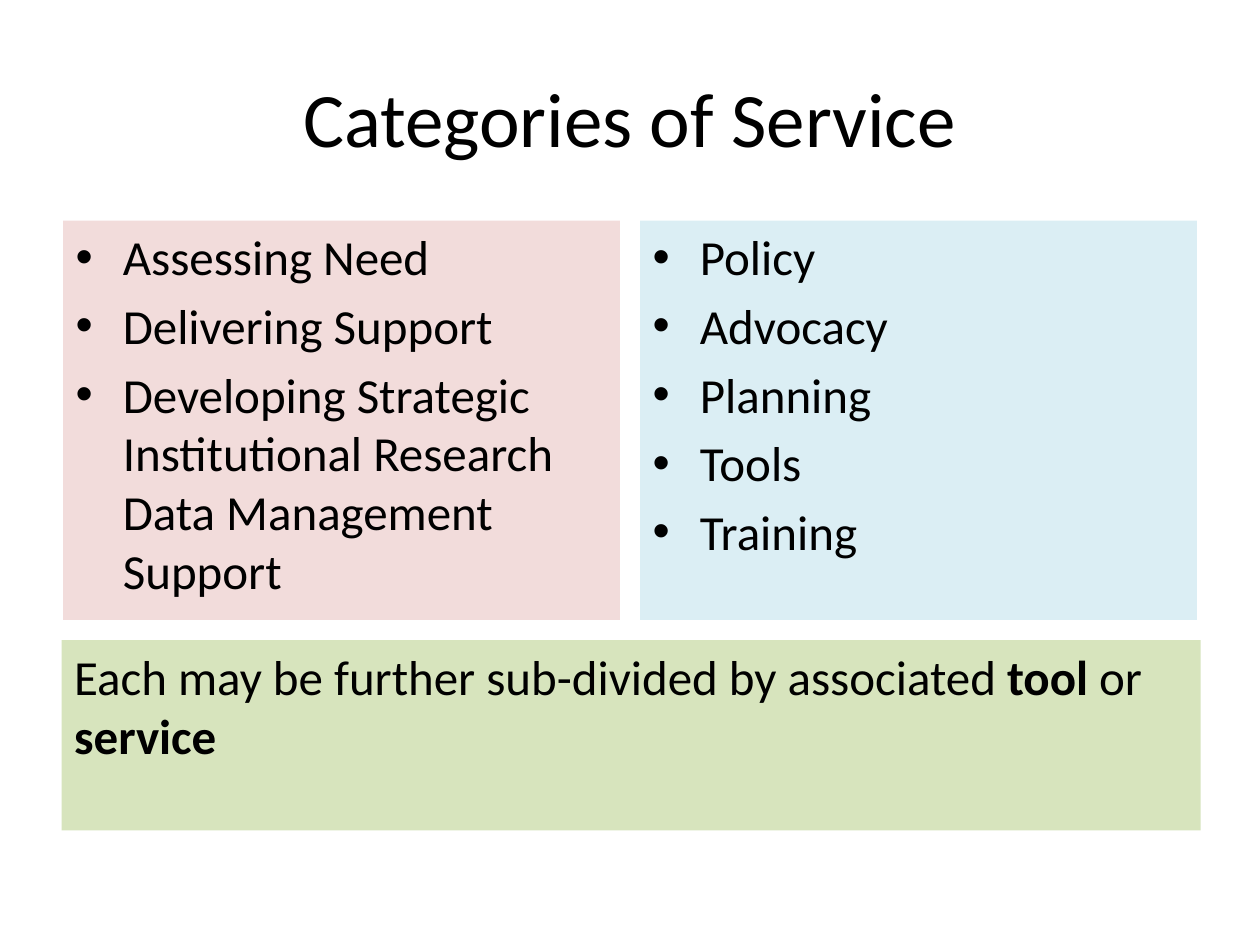
from pptx import Presentation
from pptx.dml.color import RGBColor
from pptx.enum.text import MSO_ANCHOR, MSO_AUTO_SIZE, PP_ALIGN
from pptx.util import Inches, Pt

BLACK = RGBColor(0x00, 0x00, 0x00)
PINK = RGBColor(0xF2, 0xDC, 0xDB)
BLUE = RGBColor(0xDB, 0xEE, 0xF4)
GREEN = RGBColor(0xD7, 0xE4, 0xBD)
FONT = "Calibri"
TWO_CONTENT_LAYOUT = 3

# Content
TITLE = "Categories of Service"
COLUMNS = [
    (PINK, ["Assessing Need", "Delivering Support",
            "Developing Strategic Institutional Research Data Management Support"]),
    (BLUE, ["Policy", "Advocacy", "Planning", "Tools", "Training"]),
]
NOTE = [("Each may be further sub-divided by associated ", False),
        ("tool", True), (" or ", False), ("service", True)]

# Grid, in inches
SLIDE_WIDTH, SLIDE_HEIGHT = 10, 7.5
MARGIN = 0.5
GAP = 0.16
CONTENT_WIDTH = SLIDE_WIDTH - 2 * MARGIN
COLUMN_WIDTH = (CONTENT_WIDTH - GAP) / 2
COLUMN_TOP, COLUMN_HEIGHT = 1.75, 3.17
NOTE_TOP, NOTE_HEIGHT = COLUMN_TOP + COLUMN_HEIGHT + GAP, 1.51


def place(shape, left, top, width, height):
    shape.left, shape.top = Inches(left), Inches(top)
    shape.width, shape.height = Inches(width), Inches(height)


def fill_with(shape, color):
    shape.fill.solid()
    shape.fill.fore_color.rgb = color


def format_runs(text_frame, size):
    for paragraph in text_frame.paragraphs:
        for run in paragraph.runs:
            run.font.name = FONT
            run.font.size = Pt(size)
            run.font.color.rgb = BLACK


presentation = Presentation()
presentation.slide_width = Inches(SLIDE_WIDTH)
presentation.slide_height = Inches(SLIDE_HEIGHT)
slide = presentation.slides.add_slide(presentation.slide_layouts[TWO_CONTENT_LAYOUT])

# Title
title = slide.shapes.title
place(title, MARGIN, 0.3, CONTENT_WIDTH, 1.25)
title.text_frame.text = TITLE
title.text_frame.vertical_anchor = MSO_ANCHOR.MIDDLE
title.text_frame.paragraphs[0].alignment = PP_ALIGN.CENTER
format_runs(title.text_frame, 44)

# Two bulleted columns
for index, (color, items) in enumerate(COLUMNS):
    column = slide.placeholders[index + 1]
    place(column, MARGIN + index * (COLUMN_WIDTH + GAP), COLUMN_TOP,
          COLUMN_WIDTH, COLUMN_HEIGHT)
    fill_with(column, color)
    column.text_frame.text = "\n".join(items)
    column.text_frame.auto_size = MSO_AUTO_SIZE.NONE
    format_runs(column.text_frame, 28)

# Note across both columns
note = slide.shapes.add_textbox(Inches(MARGIN - 0.01), Inches(NOTE_TOP),
                                Inches(CONTENT_WIDTH + 0.04), Inches(NOTE_HEIGHT))
fill_with(note, GREEN)
note.text_frame.word_wrap = True
for text, bold in NOTE:
    run = note.text_frame.paragraphs[0].add_run()
    run.text = text
    run.font.bold = bold
format_runs(note.text_frame, 28)

presentation.save("out.pptx")
